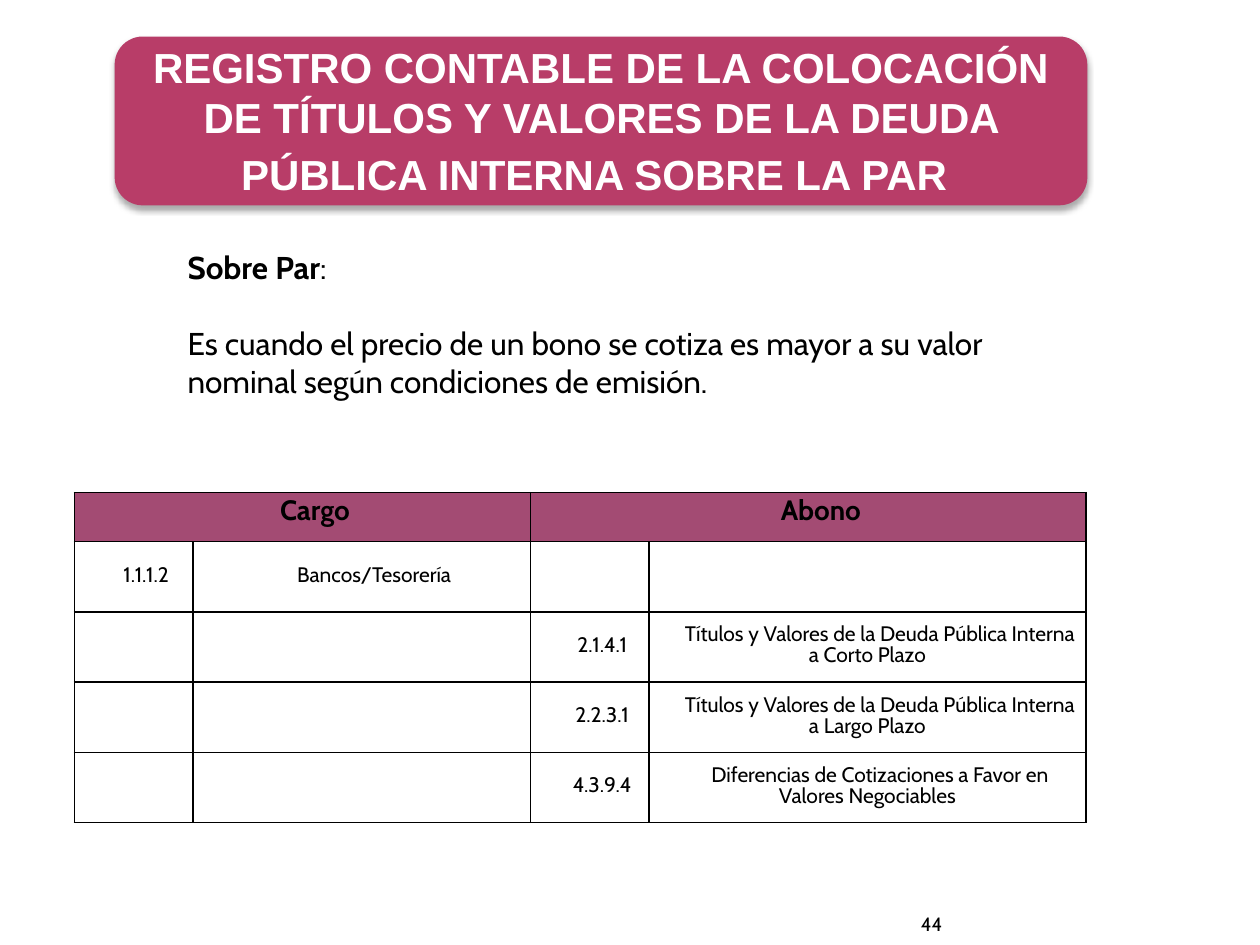
from lxml import etree
from pptx import Presentation
from pptx.dml.color import RGBColor
from pptx.enum import shapes, text
from pptx.oxml import ns
from pptx.util import Inches, Pt

COLORS = {"banner": "B83D68", "header": "A34B73", "ink": "000000", "light": "FFFFFF"}
ENTRIES = [
    ("1.1.1.2", "Bancos/Tesorería", "", ""),
    ("", "", "2.1.4.1", "Títulos y Valores de la Deuda Pública Interna a Corto Plazo"),
    ("", "", "2.2.3.1", "Títulos y Valores de la Deuda Pública Interna a Largo Plazo"),
    ("", "", "4.3.9.4", "Diferencias de Cotizaciones a Favor en Valores Negociables"),
]


def rgb(name):
    return RGBColor.from_string(COLORS[name])


def add_node(parent, tag, **attributes):
    return etree.SubElement(parent, ns.qn(tag), {k: str(v) for k, v in attributes.items()})


def style_font(font, size, face="Cabin", color="ink", bold=False):
    font.size, font.name, font.bold = Pt(size), face, bold
    font.color.rgb = rgb(color)


def add_soft_shadow(shape):
    effects = add_node(shape._element.spPr, "a:effectLst")
    shadow = add_node(effects, "a:outerShdw", blurRad=Pt(3.5), dist=Pt(2.2),
                      dir=90 * 60000, algn="ctr", rotWithShape=0)
    add_node(add_node(shadow, "a:srgbClr", val=COLORS["ink"]), "a:alpha", val=32000)


def place_banner(slide, left, top, width, height):
    """Put the slide title on a rounded panel."""
    panel = slide.shapes.add_shape(
        shapes.MSO_SHAPE.ROUNDED_RECTANGLE, left, top, width, height)
    panel.fill.solid()
    panel.fill.fore_color.rgb = rgb("banner")
    panel.line.fill.background()
    add_soft_shadow(panel)

    title = slide.shapes.title
    title._element.addprevious(panel._element)
    title.left, title.top, title.width, title.height = left, top, width, height
    frame = title.text_frame
    frame.auto_size = text.MSO_AUTO_SIZE.NONE
    frame.vertical_anchor = text.MSO_ANCHOR.MIDDLE
    heading = frame.paragraphs[0]
    heading.alignment = text.PP_ALIGN.CENTER
    for wording, size in [("REGISTRO CONTABLE DE LA COLOCACIÓN DE TÍTULOS Y VALORES "
                           "DE LA DEUDA PÚBLICA INTERNA SOBRE LA PAR", 24), (" ", 28)]:
        run = heading.add_run()
        run.text = wording
        style_font(run.font, size, "Arial", "light", True)


def place_definition(slide, left, top, width, height):
    frame = slide.shapes.add_textbox(left, top, width, height).text_frame
    frame.word_wrap = True
    term = frame.paragraphs[0]
    for wording, bold in [("Sobre Par", True), (":", False)]:
        run = term.add_run()
        run.text = wording
        style_font(run.font, 18, bold=bold)
    meaning = frame.add_paragraph()
    meaning.text = ("Es cuando el precio de un bono se cotiza es mayor a su valor "
                    "nominal según condiciones de emisión.")
    meaning.space_before = Pt(22)
    style_font(meaning.font, 18)


def format_cell(cell, wording, size=12, fill=None, bold=False):
    cell.margin_left = cell.margin_right = Inches(0.05)
    cell.margin_top = cell.margin_bottom = 0
    cell.vertical_anchor = text.MSO_ANCHOR.MIDDLE
    properties = cell._tc.get_or_add_tcPr()
    for side in ("L", "R", "T", "B"):
        border = add_node(properties, f"a:ln{side}", w=Pt(1))
        add_node(add_node(border, "a:solidFill"), "a:srgbClr", val=COLORS["ink"])
    if fill:
        cell.fill.solid()
        cell.fill.fore_color.rgb = rgb(fill)
    else:
        cell.fill.background()

    paragraph = cell.text_frame.paragraphs[0]
    paragraph.text = wording
    paragraph.alignment = text.PP_ALIGN.CENTER
    paragraph.line_spacing, paragraph.space_after = Pt(12), Pt(5)
    paragraph._p.get_or_add_pPr().set("indent", str(Inches(0.2)))
    style_font(paragraph.font, size, bold=bold)


def place_ledger(slide, left, top, width, height):
    """Draw the debit and credit table, with a code and a name column on each side."""
    table = slide.shapes.add_table(len(ENTRIES) + 1, 4, left, top, width, height).table
    table.first_row = table.horz_banding = False
    code_width, debit_name_width = Inches(0.94), Inches(2.68)
    credit_name_width = width - 2 * code_width - debit_name_width
    for column, column_width in zip(
            table.columns, (code_width, debit_name_width, code_width, credit_name_width)):
        column.width = column_width
    header_height = Inches(0.39)
    for row in table.rows:
        row.height = (height - header_height) // len(ENTRIES)
    table.rows[0].height = header_height

    for index, heading in enumerate(("Cargo", "", "Abono", "")):
        format_cell(table.cell(0, index), heading, 16, "header", True)
    for start in (0, 2):
        table.cell(0, start).merge(table.cell(0, start + 1))
    for row_index, entry in enumerate(ENTRIES, 1):
        for column_index, wording in enumerate(entry):
            format_cell(table.cell(row_index, column_index), wording)


def place_page_number(slide, left, top, width, height):
    frame = slide.shapes.add_textbox(left, top, width, height).text_frame
    frame.word_wrap = True
    frame.margin_left = frame.margin_right = frame.margin_top = frame.margin_bottom = 0
    frame.vertical_anchor = text.MSO_ANCHOR.BOTTOM
    number = frame.paragraphs[0]
    number.text = "44"
    number.alignment = text.PP_ALIGN.RIGHT
    style_font(number.font, 11)


def main():
    deck = Presentation()
    deck.slide_width, deck.slide_height = Inches(10), Inches(7.5)
    slide = deck.slides.add_slide(deck.slide_layouts[5])
    place_banner(slide, Inches(0.91), Inches(0.29), Inches(7.72), Inches(1.34))
    place_definition(slide, Inches(1.39), Inches(1.92), Inches(7.4), Inches(1.62))
    place_ledger(slide, Inches(0.59), Inches(3.91), Inches(8.03), Inches(2.62))
    place_page_number(slide, Inches(6.84), Inches(7.17), Inches(0.64), Inches(0.25))
    deck.save("out.pptx")


if __name__ == "__main__":
    main()
